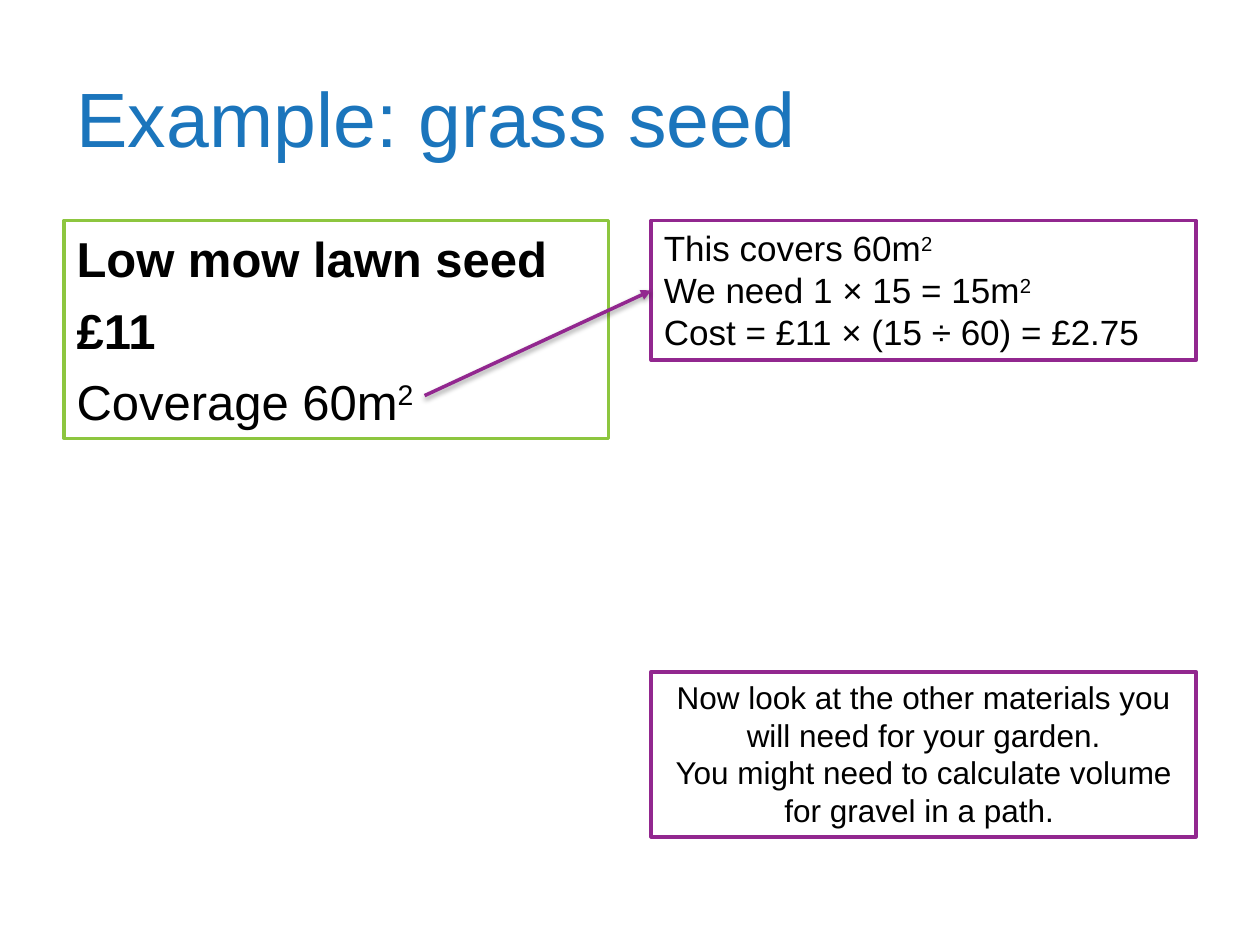
from lxml.etree import SubElement
from pptx import Presentation
from pptx.dml.color import RGBColor
from pptx.enum.shapes import MSO_CONNECTOR as Connector, MSO_SHAPE as Shape
from pptx.enum.text import MSO_ANCHOR as Anchor, PP_ALIGN as Align
from pptx.oxml.ns import qn
from pptx.util import Inches, Pt

BLACK, WHITE, BLUE, GREEN, PURPLE = "000000", "FFFFFF", "1B75BC", "8DC63F", "92278F"
LEFT_COLUMN, RIGHT_COLUMN, COLUMN_WIDTH = 0.51, 5.17, 4.32
CONTENT_TOP = 1.75
CONTENT_WIDTH = RIGHT_COLUMN + COLUMN_WIDTH - LEFT_COLUMN


def color(hex_code):
    return RGBColor.from_string(hex_code)


def write_lines(shape, lines, size, text_color=BLACK, align=Align.LEFT,
                anchor=Anchor.TOP, gap=0, bold_lines=0):
    """Write one paragraph per line; text after ^ is superscript."""
    frame = shape.text_frame
    frame.word_wrap = True
    frame.vertical_anchor = anchor
    for index, line in enumerate(lines):
        paragraph = frame.add_paragraph() if index else frame.paragraphs[0]
        paragraph.alignment = align
        if index and gap:
            paragraph.space_before = Pt(gap)
        font = paragraph.font
        font.name, font.size, font.bold = "Arial", Pt(size), index < bold_lines
        font.color.rgb = color(text_color)
        base, _, superscript = line.partition("^")
        paragraph.add_run().text = base
        if superscript:
            run = paragraph.add_run()
            run.text = superscript
            run._r.get_or_add_rPr().set("baseline", "30000")


def add_title(slide, text):
    title = slide.shapes.add_textbox(
        Inches(LEFT_COLUMN), Inches(0.3), Inches(CONTENT_WIDTH), Inches(1.25))
    write_lines(title, [text], 44, BLUE, anchor=Anchor.MIDDLE)


def add_box(slide, left, top, height, line_color, line_width, lines, size, **style):
    box = slide.shapes.add_shape(
        Shape.RECTANGLE, Inches(left), Inches(top), Inches(COLUMN_WIDTH), Inches(height))
    box.shadow.inherit = False
    box.fill.solid()
    box.fill.fore_color.rgb = color(WHITE)
    box.line.color.rgb = color(line_color)
    box.line.width = Pt(line_width)
    write_lines(box, lines, size, **style)
    return box


def add_arrow(slide, left, top, target):
    """Draw a shadowed arrow from a point to the left side of the target."""
    arrow = slide.shapes.add_connector(
        Connector.STRAIGHT, Inches(left), Inches(top), target.left, target.top)
    arrow.end_connect(target, 1)
    arrow.line.color.rgb = color(PURPLE)
    arrow.line.width = Pt(2)
    SubElement(arrow.line._get_or_add_ln(), qn("a:tailEnd"), type="triangle")
    effects = SubElement(arrow._element.spPr, qn("a:effectLst"))
    shadow = SubElement(effects, qn("a:outerShdw"), blurRad=str(Pt(3.1)),
                        dist=str(Pt(1.6)), dir="5400000", rotWithShape="0")
    shade = SubElement(shadow, qn("a:srgbClr"), val=BLACK)
    SubElement(shade, qn("a:alpha"), val="38000")


def main():
    presentation = Presentation()
    presentation.slide_width, presentation.slide_height = Inches(10), Inches(7.5)
    slide = presentation.slides.add_slide(presentation.slide_layouts[6])

    add_title(slide, "Example: grass seed")
    add_box(slide, LEFT_COLUMN, CONTENT_TOP, 1.73, GREEN, 2,
            ["Low mow lawn seed", "£11", "Coverage 60m^2"], 28,
            anchor=Anchor.MIDDLE, gap=7, bold_lines=2)
    calculation = add_box(
        slide, RIGHT_COLUMN, CONTENT_TOP, 1.11, PURPLE, 2.25,
        ["This covers 60m^2", "We need 1 × 15 = 15m^2",
         "Cost = £11 × (15 ÷ 60) = £2.75"], 20)
    add_arrow(slide, 3.37, 3.14, calculation)
    add_box(slide, RIGHT_COLUMN, 5.33, 1.31, PURPLE, 2.25,
            ["Now look at the other materials you will need for your garden.",
             "You might need to calculate volume for gravel in a path. "], 18,
            align=Align.CENTER)

    presentation.save("out.pptx")


if __name__ == "__main__":
    main()
